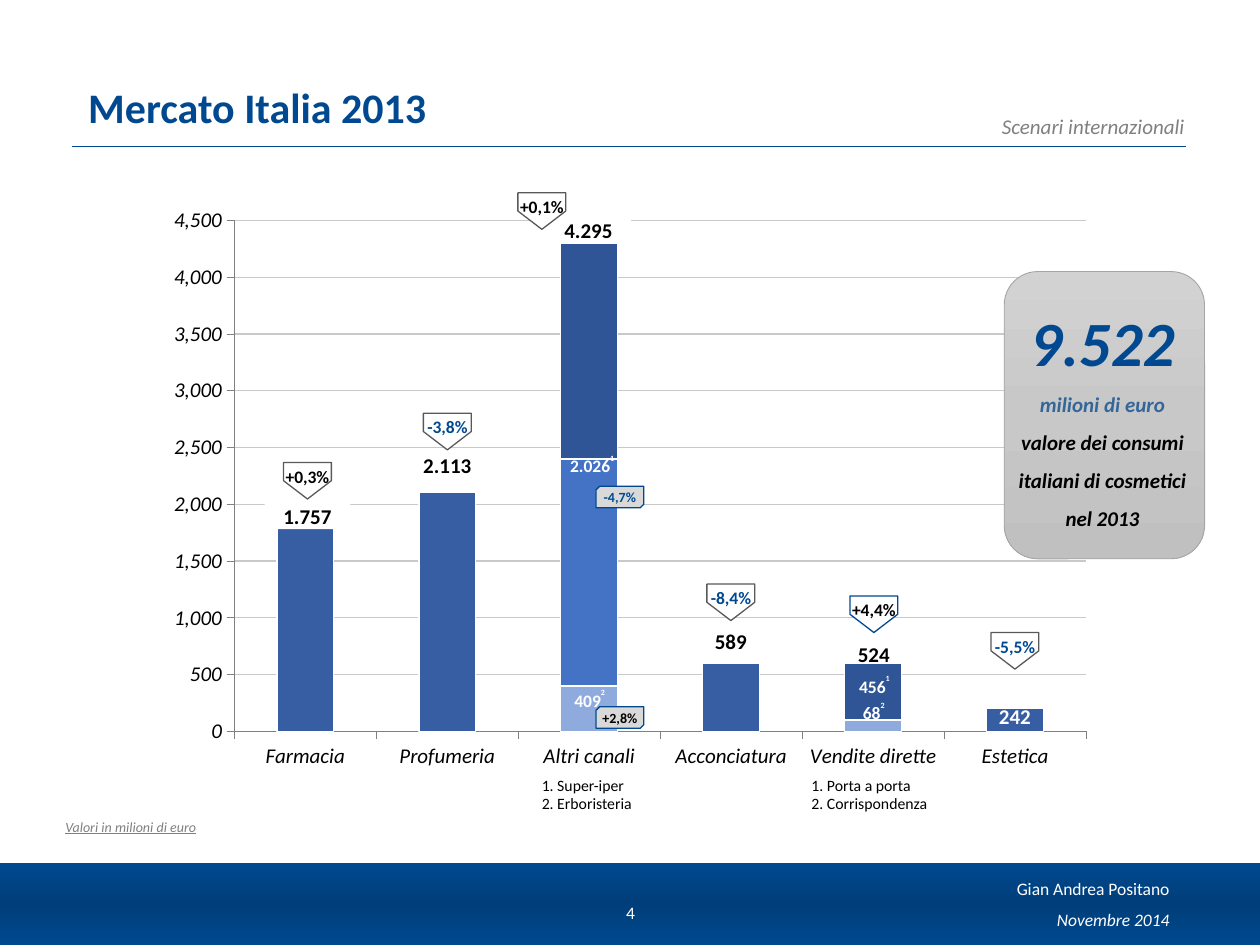
from copy import deepcopy
from dataclasses import dataclass

from lxml.etree import SubElement
from pptx import Presentation
from pptx.chart.data import CategoryChartData as Data
from pptx.dml.color import RGBColor as Rgb
from pptx.enum.chart import XL_CHART_TYPE as Kind, XL_TICK_MARK as Tick
from pptx.enum.shapes import MSO_CONNECTOR as Link, MSO_SHAPE as Form
from pptx.enum.text import MSO_ANCHOR as Anchor, MSO_AUTO_SIZE as Fit, PP_ALIGN as Align
from pptx.oxml.ns import qn
from pptx.util import Inches, Pt


@dataclass(frozen=True)
class Theme:
    font: str = "Calibri"
    blue: str = "004990"
    deep: str = "003E79"
    steel: str = "336699"
    bar: str = "375EA2"
    dark: str = "2F5597"
    mid: str = "4472C4"
    pale: str = "8FAADC"
    white: str = "FFFFFF"
    black: str = "000000"
    gray: str = "808080"
    edge: str = "595959"
    rule: str = "C9C9C9"
    chip: str = "D9D9D9"
    rim: str = "A5A5A5"
    card: tuple = ("D2D2D2", "C8C8C8", "C0C0C0")
    huge: int = 36
    head: int = 24
    base: int = 18
    body: int = 12
    small: int = 10
    note: int = 9
    tiny: int = 8


T = Theme()


def rgb(tint):
    return Rgb.from_string(tint)


def write(para, text, size=T.body, color=T.black, bold=False, italic=False,
          under=False, align=Align.LEFT, gap=None):
    """Fill a paragraph; what follows a caret is raised."""
    para.alignment = align
    if gap:
        para.line_spacing = gap
    base, _, top = text.partition("^")
    for part, pt in ((base, size), (top, T.tiny)):
        if not part:
            continue
        run = para.add_run()
        run.text = part
        font = run.font
        font.name, font.size = T.font, Pt(pt)
        font.bold, font.italic, font.underline = bold, italic, under
        font.color.rgb = rgb(color)
        if part is top:
            font._element.set("baseline", "80000")


class Board:
    """Hold the slide and draw on a grid of 100 columns by 75 rows."""

    def __init__(self, deck):
        self.unit = deck.slide_width / 100
        self.slide = deck.slides.add_slide(deck.slide_layouts[5])
        self.items = self.slide.shapes

    def grid(self, *cells):
        return [round(cell * self.unit) for cell in cells]

    def frame(self, item, anchor=Anchor.TOP, pad=(0.1, 0.05), grow=False):
        frame = item.text_frame
        frame.word_wrap = True
        frame.auto_size = Fit.SHAPE_TO_FIT_TEXT if grow else Fit.NONE
        frame.vertical_anchor = anchor
        frame.margin_left = frame.margin_right = Inches(pad[0])
        frame.margin_top = frame.margin_bottom = Inches(pad[1])
        return frame

    def title(self, text, *box):
        item = self.items.title
        item.left, item.top, item.width, item.height = self.grid(*box)
        frame = self.frame(item, Anchor.BOTTOM, (0.2, 0))
        write(frame.paragraphs[0], text, size=T.head, color=T.blue, bold=True)

    def text(self, box, text, anchor=Anchor.TOP, grow=False, **style):
        frame = self.frame(self.items.add_textbox(*self.grid(*box)), anchor, grow=grow)
        write(frame.paragraphs[0], text, **style)
        return frame

    def shape(self, box, form=Form.RECTANGLE, fill=None, line=None, width=0.75):
        item = self.items.add_shape(form, *self.grid(*box))
        item.shadow.inherit = False
        if isinstance(fill, tuple):
            item.fill.gradient()
            item.fill.gradient_angle = 270
            stops = item._element.spPr.find(".//" + qn("a:gsLst"))
            stops.insert(1, deepcopy(stops[0]))
            for k, (stop, tint) in enumerate(zip(item.fill.gradient_stops, fill)):
                stop.position, stop.color.rgb = k / 2, rgb(tint)
        elif fill:
            item.fill.solid()
            item.fill.fore_color.rgb = rgb(fill)
        else:
            item.fill.background()
        if line:
            item.line.color.rgb, item.line.width = rgb(line), Pt(width)
        else:
            item.line.fill.background()
        return item

    def label(self, box, text, fill=None, **style):
        frame = self.frame(self.shape(box, fill=fill), Anchor.BOTTOM, (0.04, 0), True)
        write(frame.paragraphs[0], text, **style)

    def tag(self, mid, row, text, form=Form.PENTAGON, tall=2.9, size=T.small,
            fill=T.white, line=T.edge):
        item = self.shape((mid - tall / 2, row - 1.9, tall, 3.8), form, fill, line)
        item.rotation = 90
        frame = self.frame(item, Anchor.MIDDLE, (0, 0))
        frame._txBody.bodyPr.set("vert", "vert270")
        tint = T.blue if text.startswith("-") else T.black
        write(frame.paragraphs[0], text, size=size, color=tint, bold=True, align=Align.CENTER)

    def line(self, *ends):
        item = self.items.add_connector(Link.STRAIGHT, *self.grid(*ends))
        item.line.color.rgb, item.line.width = rgb(T.blue), Pt(0.75)
        SubElement(item._element.spPr, qn("a:effectLst"))

    def chart(self, box, names, rows, area):
        data = Data(number_format="#,##0")
        data.categories = names
        for k, (vals, _, _) in enumerate(rows, 1):
            data.add_series(f"Series {k}", vals)
        chart = self.items.add_chart(Kind.COLUMN_STACKED, *self.grid(*box), data).chart
        chart.has_legend = chart.has_title = False
        chart.font.name, chart.font.size = T.font, Pt(T.base)
        chart.font.color.rgb = rgb(T.black)
        plot = chart.plots[0]
        plot.overlap, plot.gap_width, plot.vary_by_categories = 100, 150, False
        for axis in (chart.category_axis, chart.value_axis):
            font = axis.tick_labels.font
            font.name, font.size, font.italic = T.font, Pt(T.body), True
            axis.major_tick_mark, axis.minor_tick_mark = Tick.OUTSIDE, Tick.NONE
            axis.format.line.color.rgb = rgb(T.gray)
            axis.format.line.width = Pt(0.5)
        axis.minimum_scale, axis.maximum_scale, axis.major_unit = 0, 4500, 500
        axis.tick_labels.number_format = "#,##0"
        axis.tick_labels.number_format_is_linked = False
        axis.major_gridlines.format.line.color.rgb = rgb(T.rule)
        axis.major_gridlines.format.line.width = Pt(0.75)
        for ser, (_, tint, spots) in zip(plot.series, rows):
            looks = [(ser.format, tint)]
            looks += [(ser.points[k].format, hue) for k, hue in spots.items()]
            for look, hue in looks:
                look.fill.solid()
                look.fill.fore_color.rgb = rgb(hue)
                look.line.color.rgb, look.line.width = rgb(T.white), Pt(0.75)
        self.place(chart, box, area)

    def place(self, chart, box, area):
        zone = chart._chartSpace.find(".//" + qn("c:plotArea"))
        for old in zone.findall(qn("c:layout")):
            zone.remove(old)
        lay = SubElement(zone, qn("c:layout"))
        zone.insert(0, lay)
        node = SubElement(lay, qn("c:manualLayout"))
        left, top, wide, tall = box
        x, y, w, h = area
        shares = ((x - left) / wide, (y - top) / tall, w / wide, h / tall)
        keys = ("layoutTarget", "xMode", "yMode", "x", "y", "w", "h")
        for key, val in zip(keys, ("inner", "edge", "edge", *shares)):
            SubElement(node, qn("c:" + key)).set("val", str(val))


def main():
    deck = Presentation()
    deck.slide_width, deck.slide_height = Inches(10), Inches(7.5)
    board = Board(deck)
    right, center = Align.RIGHT, Align.CENTER
    board.line(5.7, 11.64, 94.1, 11.64)
    board.text((61, 8.5, 34, 3), "Scenari internazionali", color=T.gray, italic=True, align=right)
    board.shape((-1.9, 68.5, 103, 6.5), fill=(T.blue, T.deep, T.blue))
    foot = dict(size=T.small, color=T.white)
    board.text((78.6, 71.9, 15.2, 2.1), "Novembre 2014", Anchor.MIDDLE, italic=True, align=right, **foot)
    board.text((78.5, 69.4, 15.3, 3.1), "Gian Andrea Positano", align=right, gap=0.9, **foot)
    board.text((47.2, 70.4, 5.7, 4), "4", Anchor.MIDDLE, align=center, **foot)
    board.title("Mercato Italia 2013", 5, 1, 90, 9.5)

    names = ("Farmacia", "Profumeria", "Altri canali", "Acconciatura", "Vendite dirette", "Estetica")
    rows = (
        ((1800, 2100, 400, 600, 100, 200), T.bar, {2: T.pale, 4: T.pale}),
        ((None, None, 2000, None, 500, None), T.mid, {4: T.dark}),
        ((None, None, 1900, None, None, None), T.dark, {}),
    )
    board.chart((12.3, 15.6, 75.4, 46.4), names, rows, (18.6, 17.5, 67.6, 40.55))

    mids = (24.4, 35.5, 46.7, 58, 69.35, 80.55)
    bold = dict(bold=True, align=center)
    sums = (("1.757", 40, T.white), ("2.113", 35.9, T.white), ("4.295", 17.3, T.white),
            ("589", 49.9, T.white), ("524", 50.9, None), ("242", 55.8, None))
    for mid, (text, row, fill) in zip(mids, sums):
        tint = T.white if text == "242" else T.black
        board.label((mid - 3.4, row, 6.8, 2), text, fill, color=tint, **bold)
    parts = ((46.8, 54.7, "409^2"), (47, 36.1, "2.026^1"), (69.35, 55.7, "68^2"), (69.4, 53.6, "456^1"))
    for mid, row, text in parts:
        board.label((mid - 3.4, row, 6.8, 1.7), text, size=T.small, color=T.white, **bold)

    keys = ((42.6, ("1. Super-iper", "2. Erboristeria")), (64, ("1. Porta a porta", "2. Corrispondenza")))
    for left, lines in keys:
        for k, text in enumerate(lines):
            board.label((left, 61.6 + 1.4 * k, 11.7, 1.5), text, T.white, size=T.note)

    trends = (("+0,3%", 38.15), ("-3,8%", 34.25), ("+0,1%", 16.75),
              ("-8,4%", 47.8), ("+4,4%", 48.75), ("-5,5%", 51.65))
    for mid, (text, row) in zip(mids, trends):
        shift = 3.7 if text == "+0,1%" else 0
        board.tag(mid - shift, row, text, line=T.blue if text == "+4,4%" else T.edge)
    for row, text in ((56.95, "+2,8%"), (39.45, "-4,7%")):
        board.tag(49.2, row, text, Form.SNIP_2_DIAG_RECTANGLE, 1.7, T.tiny, T.chip, T.blue)

    board.text((4.2, 64.45, 30.1, 2.4), "Valori in milioni di euro", grow=True,
               size=T.tiny, color=T.gray, italic=True, under=True)
    board.shape((79.7, 21.55, 15.9, 22.8), Form.ROUNDED_RECTANGLE, T.card, T.rim, 0.5)
    card = board.text((79.1, 23.5, 16.8, 19.2), "9.522", Anchor.MIDDLE, True,
                      size=T.huge, color=T.blue, italic=True, **bold)
    lines = (("milioni di euro", T.steel), ("valore dei consumi italiani di cosmetici", T.black),
             ("nel 2013", T.black))
    for text, tint in lines:
        write(card.add_paragraph(), text, color=tint, italic=True, gap=1.5, **bold)
    deck.save("out.pptx")


if __name__ == "__main__":
    main()
